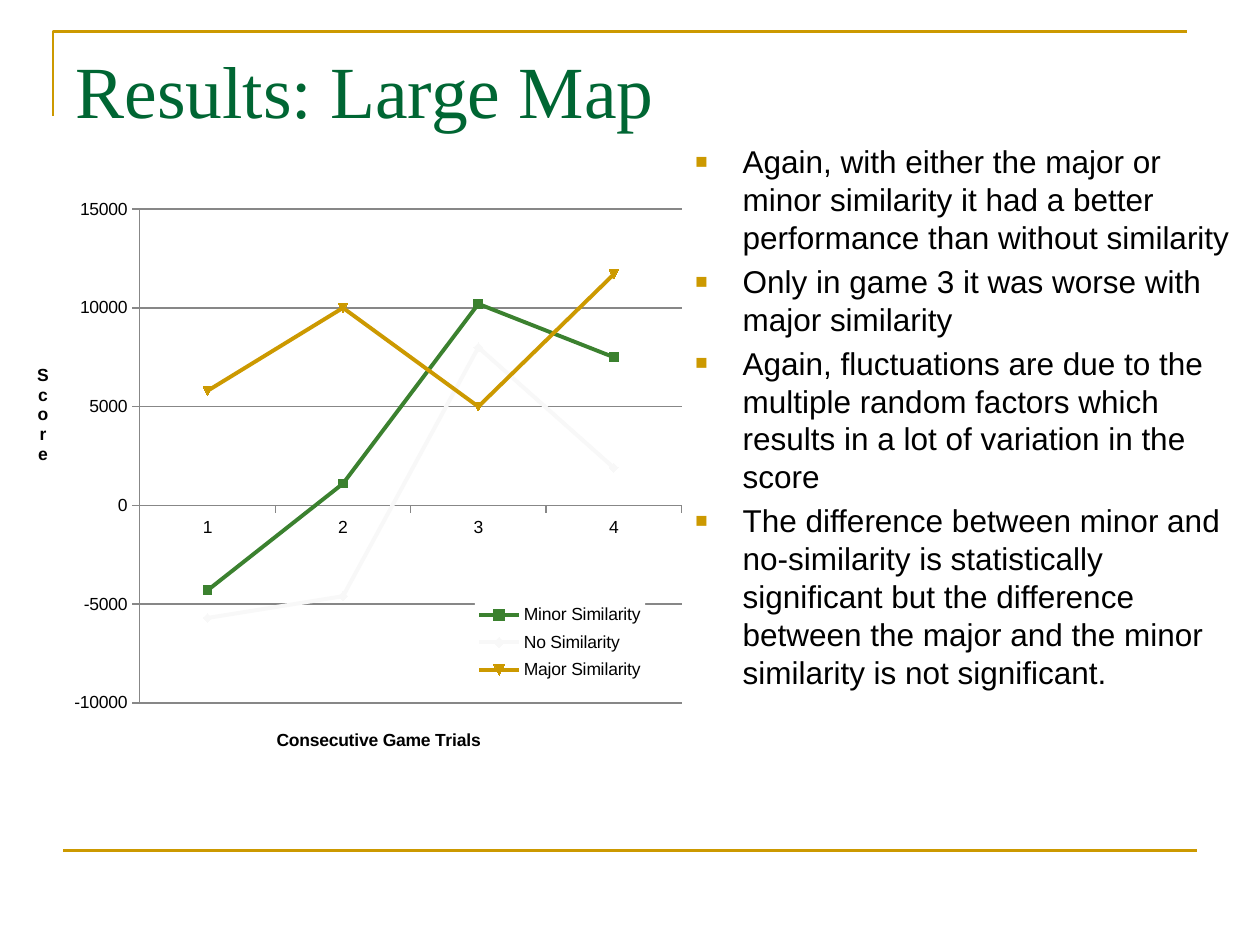
from dataclasses import dataclass

from lxml import etree
from pptx import Presentation
from pptx import util as u
from pptx.chart.data import CategoryChartData
from pptx.dml.color import RGBColor
from pptx.enum import chart as ch, shapes, text
from pptx.oxml import parse_xml
from pptx.oxml.ns import nsdecls, qn

CHART_WIDTH, CHART_HEIGHT = 6.42, 4.92


@dataclass(frozen=True)
class Theme:
    gold: str = "CC9900"
    dark_green: str = "006633"
    green: str = "3B812F"
    pale: str = "F8F8F8"
    grey: str = "878787"
    black: str = "000000"
    heading_font: str = "Times New Roman"
    body_font: str = "Arial"
    title_size: int = 42
    body_size: int = 18
    chart_size: int = 10
    rule_width: float = 1.5


def rgb(value):
    return RGBColor.from_string(value)


def format_font(font, *, name, size, color, bold=False):
    font.name, font.size, font.bold = name, u.Pt(size), bold
    font.color.rgb = rgb(color)


def write_text(paragraph, content, **font_format):
    run = paragraph.add_run()
    run.text = content
    format_font(run.font, **font_format)


def add_bullet(paragraph, color):
    """Give the paragraph a hanging square bullet."""
    properties = paragraph._p.get_or_add_pPr()
    properties.set("marL", str(u.Pt(27)))
    properties.set("indent", str(-u.Pt(27)))
    for xml in (
        f'<a:buClr {nsdecls("a")}><a:srgbClr val="{color}"/></a:buClr>',
        f'<a:buSzPct {nsdecls("a")} val="65000"/>',
        f'<a:buFont {nsdecls("a")} typeface="Arial"/>',
        f'<a:buChar {nsdecls("a")} char="■"/>',
    ):
        properties.append(parse_xml(xml))


def place_chart_part(part, **inches):
    """Fix a plot area, legend or title at inches from the chart's corner."""
    layout = part.find(qn("c:layout"))
    if layout is None:
        layout = etree.Element(qn("c:layout"))
        before = part.find(qn("c:legendPos"))
        if before is None:
            before = part.find(qn("c:tx"))
        if before is None:
            part.insert(0, layout)
        else:
            before.addnext(layout)
    for child in list(layout):
        layout.remove(child)
    manual = etree.SubElement(layout, qn("c:manualLayout"))
    if part.tag == qn("c:plotArea"):
        etree.SubElement(manual, qn("c:layoutTarget")).set("val", "inner")
    for side in ("x", "y"):
        etree.SubElement(manual, qn(f"c:{side}Mode")).set("val", "edge")
    for key, length in inches.items():
        whole = CHART_WIDTH if key in "xw" else CHART_HEIGHT
        etree.SubElement(manual, qn(f"c:{key}")).set("val", str(length / whole))


class SlideBuilder:
    def __init__(self, presentation, theme):
        self.theme = theme
        self.slide = presentation.slides.add_slide(presentation.slide_layouts[5])

    def style_rule(self, shape):
        shape.line.color.rgb = rgb(self.theme.gold)
        shape.line.width = u.Pt(self.theme.rule_width)

    def corner_rule(self, left, top, right, bottom):
        builder = self.slide.shapes.build_freeform(u.Inches(left), u.Inches(bottom))
        builder.add_line_segments(
            [(u.Inches(left), u.Inches(top)), (u.Inches(right), u.Inches(top))],
            close=False)
        shape = builder.convert_to_shape()
        shape.fill.background()
        shape.shadow.inherit = False
        self.style_rule(shape)

    def horizontal_rule(self, left, right, y):
        rule = self.slide.shapes.add_connector(
            shapes.MSO_CONNECTOR.STRAIGHT,
            u.Inches(left), u.Inches(y), u.Inches(right), u.Inches(y))
        self.style_rule(rule)
        etree.SubElement(rule._element.spPr, qn("a:effectLst"))

    def title(self, content, left, top, width, height):
        shape = self.slide.shapes.title
        shape.left, shape.top = u.Inches(left), u.Inches(top)
        shape.width, shape.height = u.Inches(width), u.Inches(height)
        frame = shape.text_frame
        frame.vertical_anchor = text.MSO_ANCHOR.TOP
        frame.auto_size = text.MSO_AUTO_SIZE.NONE
        paragraph = frame.paragraphs[0]
        paragraph.alignment = text.PP_ALIGN.LEFT
        write_text(paragraph, content, name=self.theme.heading_font,
                   size=self.theme.title_size, color=self.theme.dark_green)

    def bullets(self, items, left, top, width, height):
        frame = self.slide.shapes.add_textbox(
            u.Inches(left), u.Inches(top), u.Inches(width), u.Inches(height)).text_frame
        frame.word_wrap = True
        for index, item in enumerate(items):
            paragraph = frame.add_paragraph() if index else frame.paragraphs[0]
            if index:
                paragraph.space_before = u.Pt(0.2 * self.theme.body_size)
            add_bullet(paragraph, self.theme.gold)
            write_text(paragraph, item, name=self.theme.body_font,
                       size=self.theme.body_size, color=self.theme.black)

    def axis(self, axis, title, x, y):
        axis.format.line.color.rgb = rgb(self.theme.grey)
        axis.major_tick_mark = ch.XL_TICK_MARK.OUTSIDE
        axis.minor_tick_mark = ch.XL_TICK_MARK.NONE
        write_text(axis.axis_title.text_frame.paragraphs[0], title,
                   name=self.theme.body_font, size=self.theme.chart_size,
                   color=self.theme.black, bold=True)
        place_chart_part(axis.axis_title._element, x=x, y=y)

    def line_chart(self, categories, series, left, top):
        """Draw series given as (name, values, colour, order)."""
        data = CategoryChartData(number_format="General")
        data.categories = categories
        for name, values, *_ in series:
            data.add_series(name, values)
        chart = self.slide.shapes.add_chart(
            ch.XL_CHART_TYPE.LINE_MARKERS, u.Inches(left), u.Inches(top),
            u.Inches(CHART_WIDTH), u.Inches(CHART_HEIGHT), data).chart
        format_font(chart.font, name=self.theme.body_font,
                    size=self.theme.chart_size, color=self.theme.black)
        chart.has_title = False
        chart.plots[0].vary_by_categories = False
        for line, (_, _, color, order) in zip(list(chart.plots[0].series), series):
            line.smooth = False
            line.format.line.color.rgb = rgb(color)
            line.format.line.width = u.Pt(2.25)
            line.marker.style, line.marker.size = ch.XL_MARKER_STYLE.AUTOMATIC, 5
            line.marker.format.fill.solid()
            line.marker.format.fill.fore_color.rgb = rgb(color)
            line.marker.format.line.color.rgb = rgb(color)
            line._element.find(qn("c:order")).set("val", str(order))

        self.axis(chart.category_axis, "Consecutive Game Trials", 2.17, 4.51)
        values = chart.value_axis
        self.axis(values, "Score", 0.27, 1.61)
        values.axis_title.text_frame._txBody.bodyPr.set("vert", "wordArtVert")
        values.minimum_scale, values.maximum_scale = -10000, 15000
        values.major_unit = 5000
        values.major_gridlines.format.line.color.rgb = rgb(self.theme.grey)

        chart.has_legend = True
        chart.legend.position = ch.XL_LEGEND_POSITION.RIGHT
        chart.legend.include_in_layout = False
        legend = chart.legend._element
        place_chart_part(legend, x=3.77, y=3.49, w=1.35, h=0.72)
        legend.find(qn("c:overlay")).addnext(parse_xml(
            f'<c:spPr {nsdecls("c", "a")}><a:solidFill>'
            '<a:srgbClr val="FFFFFF"/></a:solidFill></c:spPr>'))
        place_chart_part(chart._chartSpace.chart.plotArea, x=1.11, y=0.41, w=4.3, h=3.92)


def main():
    presentation = Presentation()
    presentation.slide_width, presentation.slide_height = u.Inches(10), u.Inches(7.5)
    theme = Theme()
    builder = SlideBuilder(presentation, theme)
    builder.corner_rule(0.42, 0.25, 9.42, 0.92)
    builder.horizontal_rule(0.5, 9.5, 6.75)
    builder.title("Results: Large Map", 0.5, 0.31, 9, 1.25)
    builder.line_chart(["1", "2", "3", "4"], [
        ("Minor Similarity", (-4300, 1100, 10200, 7500), theme.green, 1),
        ("No Similarity", (-5700, -4600, 8000, 1900), theme.pale, 2),
        ("Major Similarity", (5800, 10000, 5000, 11700), theme.gold, 0),
    ], 0, 1.25)
    builder.bullets([
        "Again, with either the major or minor similarity it had a better "
        "performance than without similarity",
        "Only in game 3 it was worse with major similarity",
        "Again, fluctuations are due to the multiple random factors which "
        "results in a lot of variation in the score",
        "The difference between minor and no-similarity is statistically "
        "significant but the difference between the major and the minor "
        "similarity is not significant.",
    ], 5.42, 1.08, 4.58, 5.25)
    presentation.save("out.pptx")


if __name__ == "__main__":
    main()
